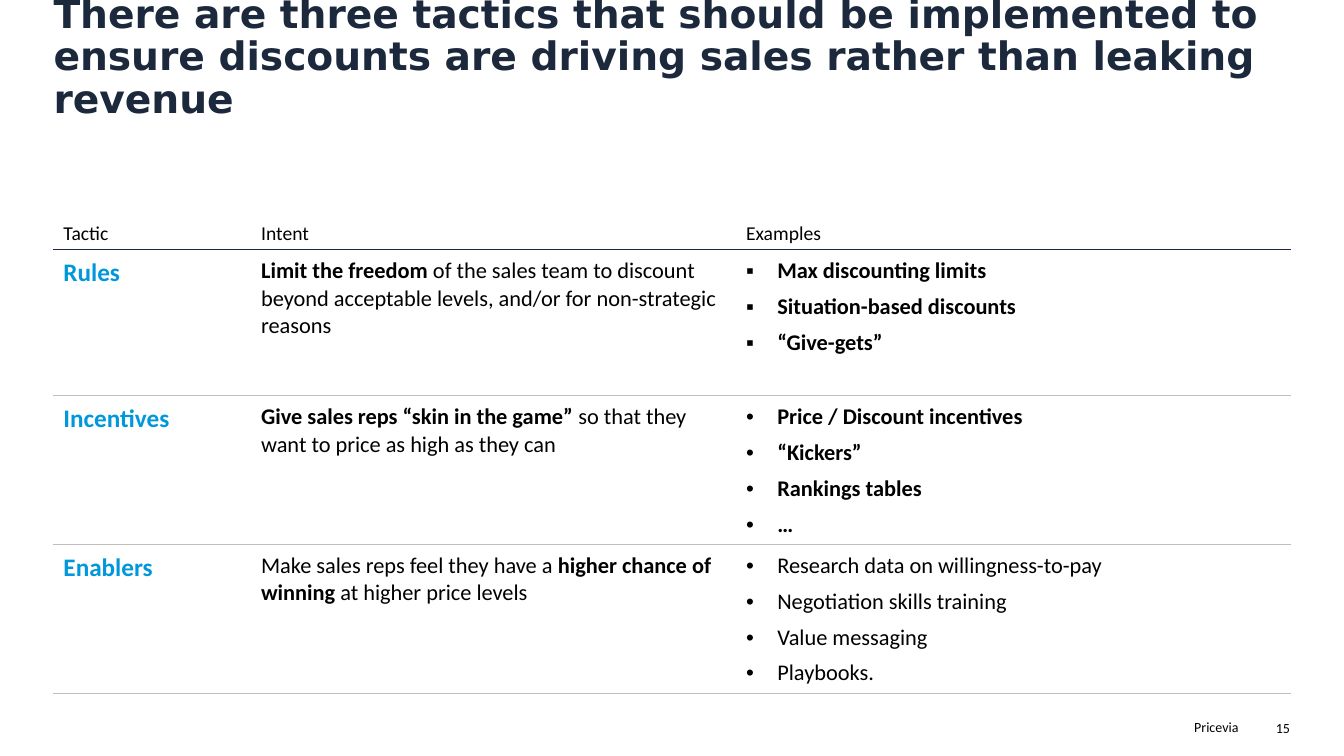
"""Build a slide with a table of three discount tactics."""
from lxml.etree import SubElement
from pptx import Presentation
from pptx.dml.color import RGBColor
from pptx.enum.text import MSO_ANCHOR as Anchor, PP_ALIGN as Align
from pptx.oxml import parse_xml
from pptx.oxml.ns import nsdecls, qn
from pptx.util import Cm, Pt

NAVY, BLUE, BLACK, GREY, WHITE = "1C293C", "0098DB", "000000", "BFBFBF", "FFFFFF"


def style(paragraph, size, color, bold=None, name="Calibri"):
    font = paragraph.font
    font.size, font.bold, font.name = Pt(size), bold, name
    font.color.rgb = RGBColor.from_string(color)


def add_text(left, top, width, height, text):
    frame = slide.shapes.add_textbox(Cm(left), Cm(top), Cm(width), Cm(height)).text_frame
    frame.word_wrap = True
    frame.margin_left = frame.margin_right = 0
    frame.margin_top = frame.margin_bottom = Cm(0.13)
    frame.text = text
    return frame


presentation = Presentation()
presentation.slide_width, presentation.slide_height = Cm(33.87), Cm(19.05)
slide = presentation.slides.add_slide(presentation.slide_layouts[6])

for left, top, width, text in [(23.39, 17.98, 7.82, "Pricevia"), (30.1, 18.01, 2.41, "15")]:
    paragraph = add_text(left, top, width, 0.69, text).paragraphs[0]
    paragraph.alignment = Align.RIGHT
    style(paragraph, 10, BLACK)

title = add_text(1.35, 1.3, 31.17, 1.9,
                 "There are three tactics that should be implemented to ensure "
                 "discounts are driving sales rather than leaking revenue")
title.vertical_anchor = Anchor.BOTTOM
title.paragraphs[0].line_spacing = 0.9
style(title.paragraphs[0], 28, NAVY, True, "DejaVu Sans")

headers = ["Tactic", "Intent", "Examples"]
tactics = [
    ("Rules",
     [("Limit the freedom", True),
      (" of the sales team to discount beyond acceptable levels, "
       "and/or for non-strategic reasons", False)],
     "▪", True, ["Max discounting limits", "Situation-based discounts", "“Give-gets”"]),
    ("Incentives",
     [("Give sales reps “skin in the game” ", True),
      ("so that they want to price as high as they can", False)],
     "•", True, ["Price / Discount incentives", "“Kickers”", "Rankings tables", "…"]),
    ("Enablers",
     [("Make sales reps feel they have a ", False),
      ("higher chance of winning", True),
      (" at higher price levels", False)],
     "•", False, ["Research data on willingness-to-pay", "Negotiation skills training",
                  "Value messaging", "Playbooks."]),
]
column_widths = [4.98, 12.22, 13.97]
row_heights = [0.91, 3.68, 3.43, 3.43]
table = slide.shapes.add_table(len(row_heights), len(column_widths), Cm(1.35), Cm(5.38),
                               Cm(sum(column_widths)), Cm(sum(row_heights))).table
for column, width in zip(table.columns, column_widths):
    column.width = Cm(width)

rule_colors = [WHITE, NAVY, GREY, GREY, GREY]
for row_index, (row, height) in enumerate(zip(table.rows, row_heights)):
    row.height = Cm(height)
    for cell in row.cells:
        cell.margin_left = cell.margin_right = Cm(0.25)
        cell.margin_top, cell.margin_bottom = (Cm(0.2), Cm(0.2)) if row_index else (Cm(0.05), Cm(0.1))
        cell.vertical_anchor = Anchor.TOP if row_index else Anchor.BOTTOM
        cell.fill.background()
        properties = cell._tc.get_or_add_tcPr()
        borders = [("L", WHITE), ("R", WHITE),
                   ("T", rule_colors[row_index]), ("B", rule_colors[row_index + 1])]
        for position, (side, color) in enumerate(borders):
            line_width = Pt(1) if color == WHITE else Pt(0.5)
            properties.insert(position, parse_xml(
                f'<a:ln{side} {nsdecls("a")} w="{line_width}"><a:solidFill>'
                f'<a:srgbClr val="{color}"/></a:solidFill></a:ln{side}>'))

for cell, header in zip(table.rows[0].cells, headers):
    cell.text = header
    style(cell.text_frame.paragraphs[0], 14, BLACK)

for row_index, (tactic, intent, bullet, bold, examples) in enumerate(tactics, 1):
    tactic_cell, intent_cell, examples_cell = table.rows[row_index].cells
    tactic_cell.text = tactic
    style(tactic_cell.text_frame.paragraphs[0], 18, BLUE, True)

    paragraph = intent_cell.text_frame.paragraphs[0]
    paragraph.space_after = Pt(6)
    style(paragraph, 16, BLACK)
    for text, emphasis in intent:
        run = paragraph.add_run()
        run.text, run.font.bold = text, emphasis

    examples_cell.text = "\n".join(examples)
    for paragraph in examples_cell.text_frame.paragraphs:
        paragraph.space_after = Pt(6)
        properties = paragraph._p.get_or_add_pPr()
        properties.set("marL", str(Cm(0.79)))
        properties.set("indent", str(-Cm(0.79)))
        SubElement(properties, qn("a:buFont")).set("typeface", "Arial")
        SubElement(properties, qn("a:buChar")).set("char", bullet)
        style(paragraph, 16, BLACK, bold)

presentation.save("out.pptx")
